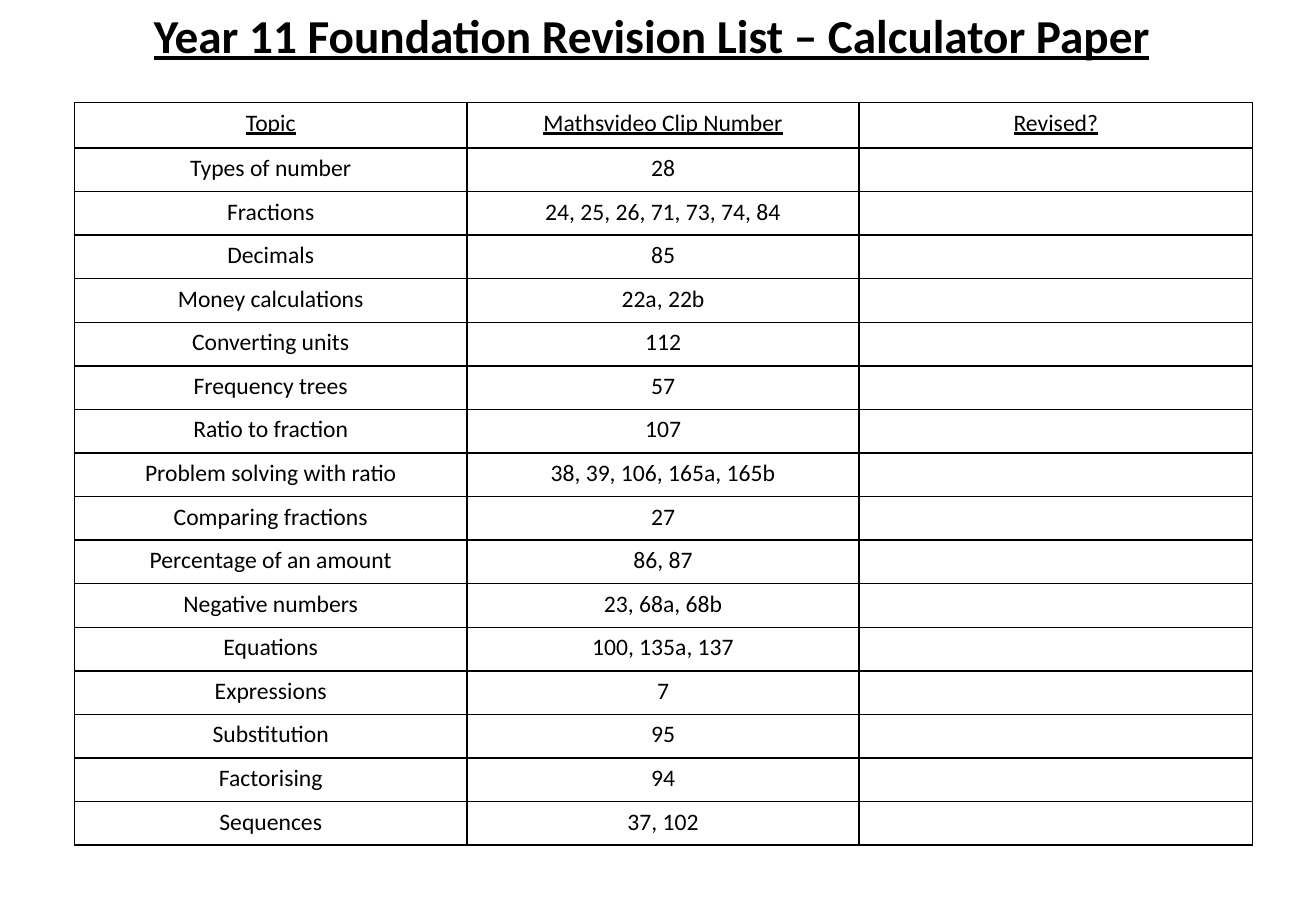
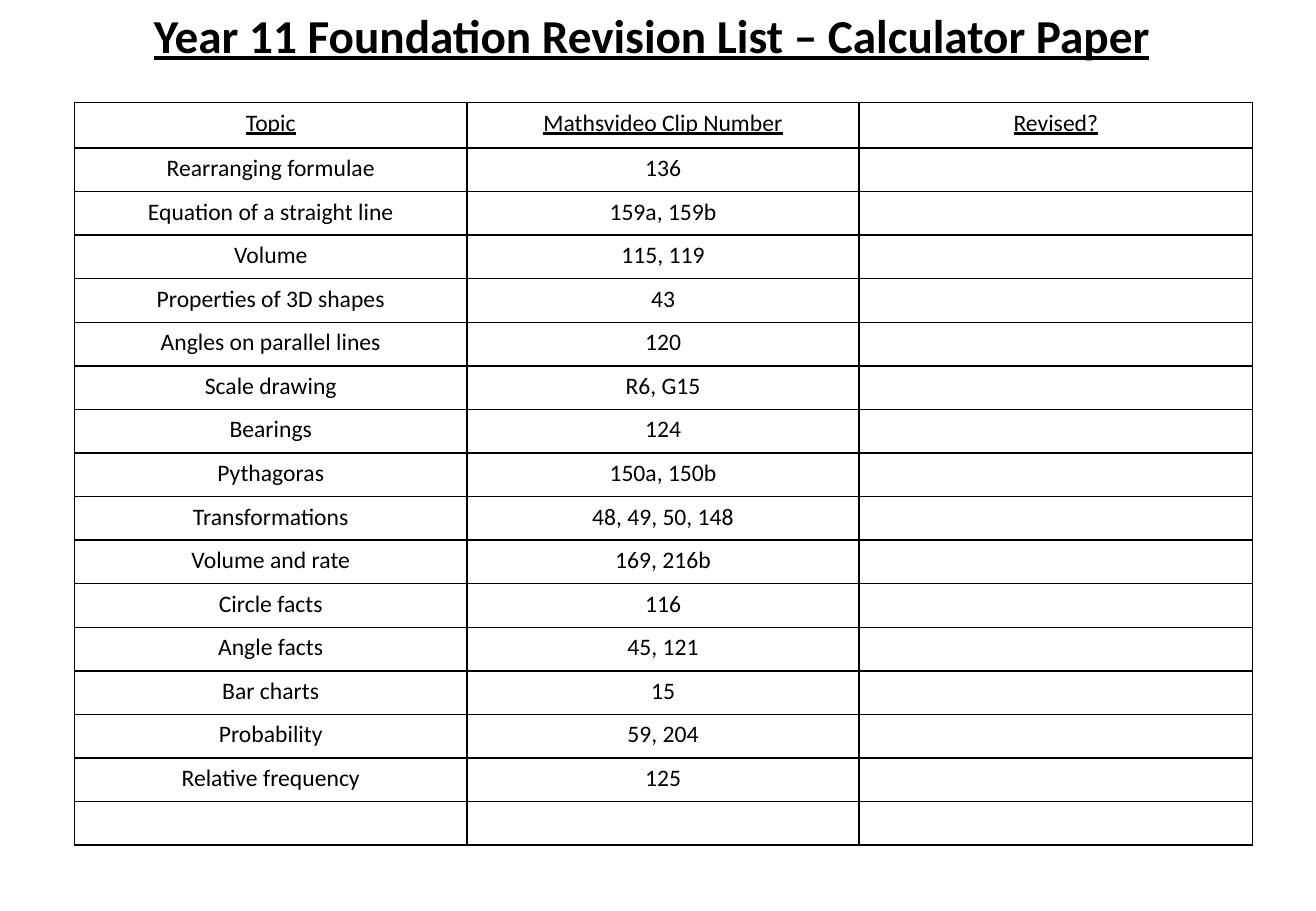
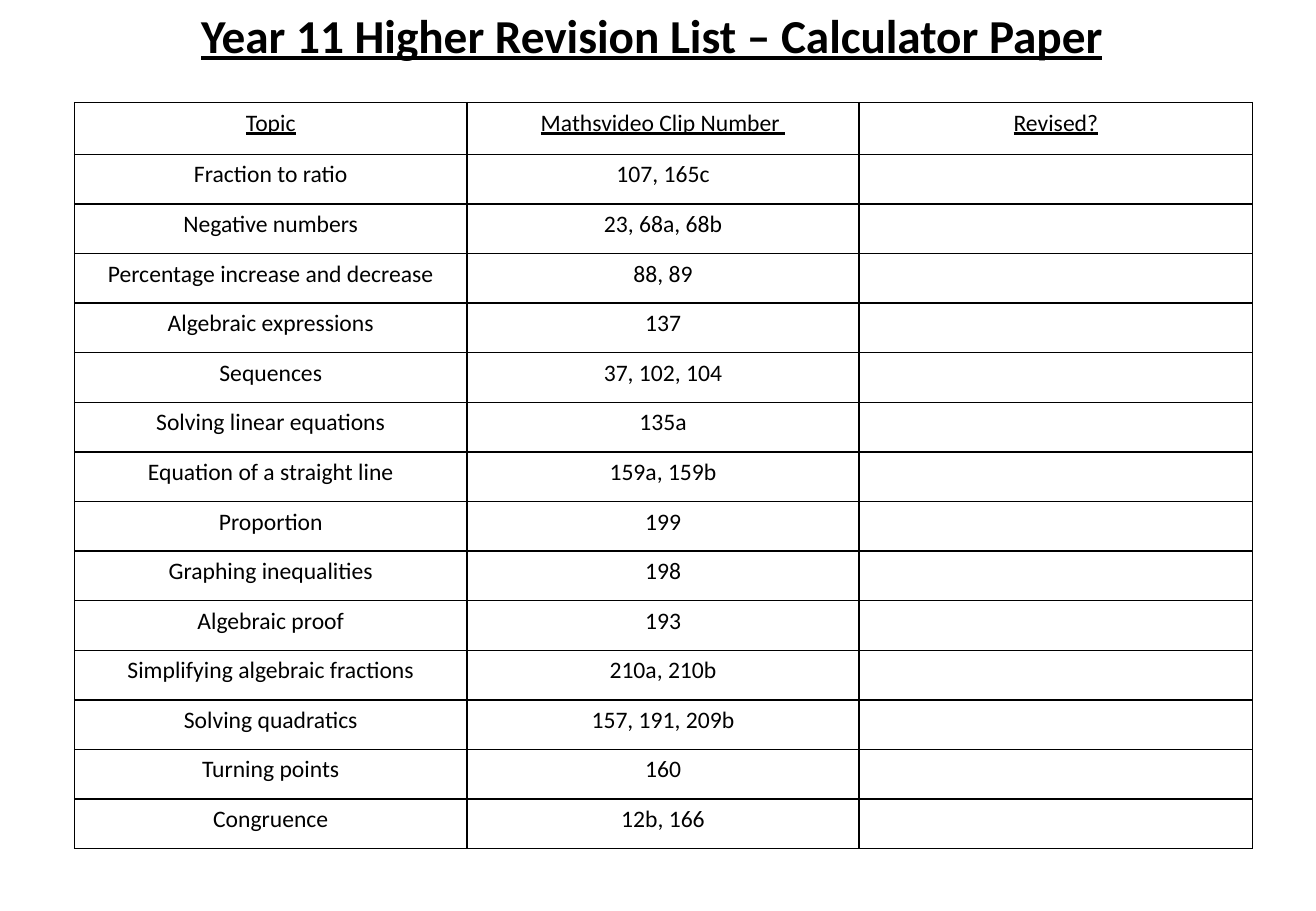
from lxml import etree
from pptx import Presentation
from pptx.dml.color import RGBColor
from pptx.enum.text import MSO_ANCHOR, MSO_AUTO_SIZE, PP_ALIGN
from pptx.oxml.ns import qn
from pptx.util import Pt

PX = 9525
SLIDE_SIZE = (1040, 720)
TITLE_BOX = (49, 0, 932, 55)
TABLE_LEFT, TABLE_TOP = 59, 81
COLUMN_WIDTHS = (310, 310, 311)

FONT = "Calibri"
TITLE_PT, CELL_PT, BORDER_PT = 28, 14, 1
COLORS = {"ink": "000000", "paper": "FFFFFF"}
CENTER, TOP = PP_ALIGN.CENTER, MSO_ANCHOR.TOP
GROW = MSO_AUTO_SIZE.SHAPE_TO_FIT_TEXT

FOUNDATION = "Year 11 Foundation Revision List – Calculator Paper"
HIGHER = "Year 11 Higher Revision List – Calculator Paper"
HEADINGS = ("Topic", "Mathsvideo Clip Number", "Revised?")

REVISION_LISTS = [
    {
        "title": FOUNDATION,
        "headings": HEADINGS,
        "header_height": 36,
        "table_height": 587,
        "topics": [
            ("Types of number", "28"),
            ("Fractions", "24, 25, 26, 71, 73, 74, 84"),
            ("Decimals", "85"),
            ("Money calculations", "22a, 22b"),
            ("Converting units", "112"),
            ("Frequency trees", "57"),
            ("Ratio to fraction", "107"),
            ("Problem solving with ratio", "38, 39, 106, 165a, 165b"),
            ("Comparing fractions", "27"),
            ("Percentage of an amount", "86, 87"),
            ("Negative numbers", "23, 68a, 68b"),
            ("Equations", "100, 135a, 137"),
            ("Expressions", "7"),
            ("Substitution", "95"),
            ("Factorising", "94"),
            ("Sequences", "37, 102"),
        ],
    },
    {
        "title": FOUNDATION,
        "headings": HEADINGS,
        "header_height": 36,
        "table_height": 587,
        "topics": [
            ("Rearranging formulae", "136"),
            ("Equation of a straight line", "159a, 159b"),
            ("Volume", "115, 119"),
            ("Properties of 3D shapes", "43"),
            ("Angles on parallel lines", "120"),
            ("Scale drawing", "R6, G15"),
            ("Bearings", "124"),
            ("Pythagoras", "150a, 150b"),
            ("Transformations", "48, 49, 50, 148"),
            ("Volume and rate", "169, 216b"),
            ("Circle facts", "116"),
            ("Angle facts", "45, 121"),
            ("Bar charts", "15"),
            ("Probability", "59, 204"),
            ("Relative frequency", "125"),
            ("", ""),
        ],
    },
    {
        "title": HIGHER,
        "headings": ("Topic", "Mathsvideo Clip Number ", "Revised?"),
        "header_height": 41,
        "table_height": 590,
        "topics": [
            ("Fraction to ratio", "107, 165c"),
            ("Negative numbers", "23, 68a, 68b"),
            ("Percentage increase and decrease", "88, 89"),
            ("Algebraic expressions", "137"),
            ("Sequences", "37, 102, 104"),
            ("Solving linear equations", "135a"),
            ("Equation of a straight line", "159a, 159b"),
            ("Proportion", "199"),
            ("Graphing inequalities", "198"),
            ("Algebraic proof", "193"),
            ("Simplifying algebraic fractions", "210a, 210b"),
            ("Solving quadratics", "157, 191, 209b"),
            ("Turning points", "160"),
            ("Congruence", "12b, 166"),
        ],
    },
]


def px(*lengths):
    return [round(length * PX) for length in lengths]


def write_centered(text_frame, text, size, bold=False, underline=False):
    text_frame.text = text
    paragraph = text_frame.paragraphs[0]
    paragraph.alignment = CENTER
    for run in paragraph.runs:
        run.font.name = FONT
        run.font.size = Pt(size)
        run.font.bold = bold
        run.font.underline = underline
        run.font.color.rgb = RGBColor.from_string(COLORS["ink"])
    if not text:
        # An empty cell needs its own text size, or it stretches the row
        end = etree.SubElement(paragraph._p, qn("a:endParaRPr"))
        end.set("sz", str(size * 100))


def add_title(slide, text):
    title = slide.shapes.title
    title.left, title.top, title.width, title.height = px(*TITLE_BOX)
    frame = title.text_frame
    write_centered(frame, text, TITLE_PT, bold=True, underline=True)
    frame.vertical_anchor = TOP
    frame.word_wrap = True
    frame.auto_size = GROW


def draw_borders(cell):
    properties = cell._tc.get_or_add_tcPr()
    for side in ("lnL", "lnR", "lnT", "lnB"):
        line = etree.SubElement(properties, qn(f"a:{side}"), w=str(Pt(BORDER_PT)))
        fill = etree.SubElement(line, qn("a:solidFill"))
        etree.SubElement(fill, qn("a:srgbClr"), val=COLORS["ink"])


def add_topic_table(slide, revision_list):
    rows = [revision_list["headings"]]
    rows += [(topic, clips, "") for topic, clips in revision_list["topics"]]
    header_height = revision_list["header_height"]
    table_height = revision_list["table_height"]
    topic_height = (table_height - header_height) / (len(rows) - 1)

    box = px(TABLE_LEFT, TABLE_TOP, sum(COLUMN_WIDTHS), table_height)
    table = slide.shapes.add_table(len(rows), len(COLUMN_WIDTHS), *box).table
    table.first_row = table.horz_banding = False
    for column, width in zip(table.columns, px(*COLUMN_WIDTHS)):
        column.width = width
    for index, texts in enumerate(rows):
        is_header = index == 0
        row = table.rows[index]
        row.height = px(header_height if is_header else topic_height)[0]
        for cell, text in zip(row.cells, texts):
            write_centered(cell.text_frame, text, CELL_PT, underline=is_header)
            draw_borders(cell)
            cell.fill.solid()
            cell.fill.fore_color.rgb = RGBColor.from_string(COLORS["paper"])


def main():
    presentation = Presentation()
    presentation.slide_width, presentation.slide_height = px(*SLIDE_SIZE)
    title_only = presentation.slide_layouts[5]
    for revision_list in REVISION_LISTS:
        slide = presentation.slides.add_slide(title_only)
        add_title(slide, revision_list["title"])
        add_topic_table(slide, revision_list)
    presentation.save("out.pptx")


if __name__ == "__main__":
    main()
